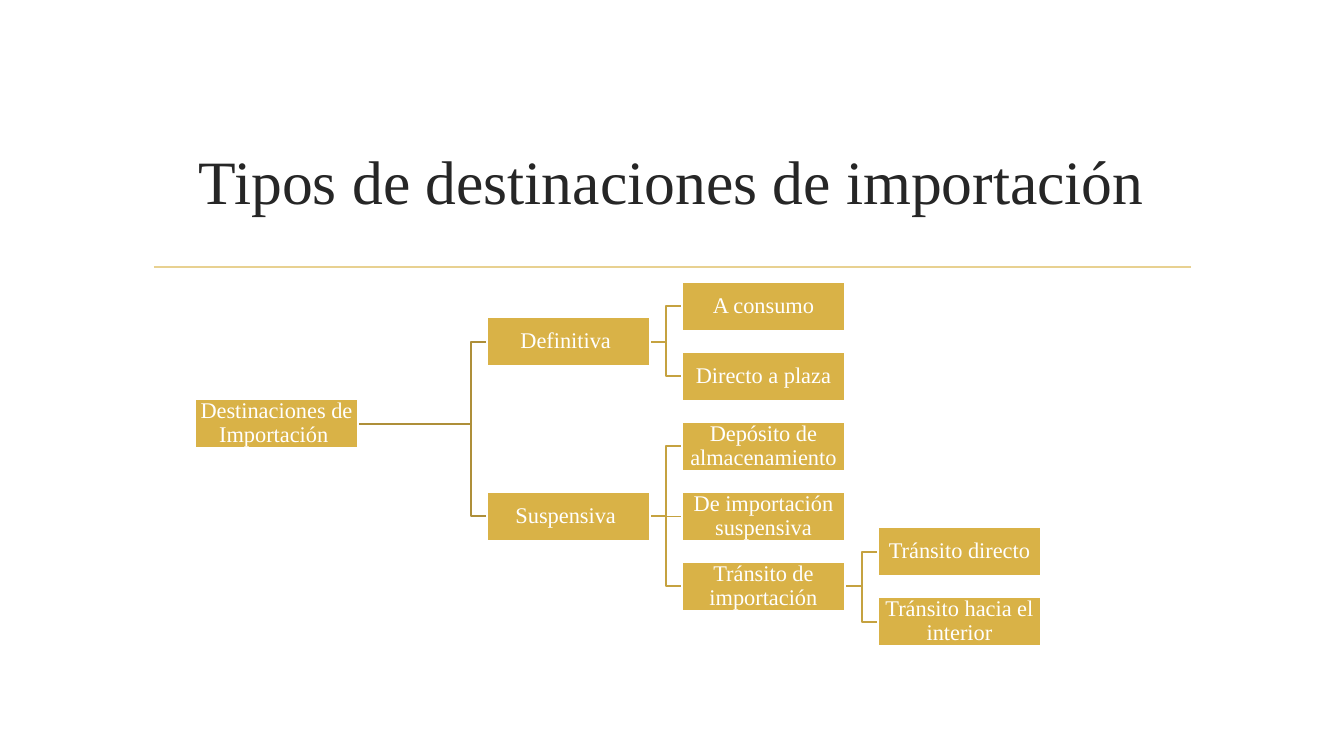
from pptx import Presentation, util as u
from pptx.dml.color import RGBColor
from pptx.enum import shapes, text
from pptx.oxml.ns import qn
from lxml import etree

PX = 914400 / 100.8
INK = RGBColor(0x26, 0x26, 0x26)
WHITE = RGBColor(0xFF, 0xFF, 0xFF)
GOLD = RGBColor(0xD9, 0xB2, 0x47)
RULE = RGBColor(0xE8, 0xD1, 0x91)
TRUNK = RGBColor(0xAE, 0x8F, 0x39)
TWIG = RGBColor(0xC5, 0xA2, 0x40)

COLS = [195, 487, 682, 878]
TOP, STEP = 282, 35
WIDE, HIGH, BEND = 163, 49, 16


def px(n):
    return u.Emu(round(n * PX))


def row(n):
    """Top of a box, counted in half steps between leaves."""
    return TOP + n * STEP


# label, top, children
TREE = ("Destinaciones de Importación ", 399, [
    ("Definitiva ", row(1), [
        ("A consumo", row(0), []),
        ("Directo a plaza", row(2), [])]),
    ("Suspensiva ", row(6), [
        ("Depósito de almacenamiento", row(4), []),
        ("De importación suspensiva", row(6), []),
        ("Tránsito de importación", row(8), [
            ("Tránsito directo", row(7), []),
            ("Tránsito hacia el interior", row(9), [])])])])


class Page:
    font = "Times New Roman"
    stroke = u.Pt(1.25)

    def __init__(self, slide):
        self.shapes = slide.shapes

    def label(self, shape, words, size, color, inset=None, spacing=None):
        frame = shape.text_frame
        frame.word_wrap = True
        frame.vertical_anchor = text.MSO_ANCHOR.MIDDLE
        if inset is not None:
            frame.margin_left = frame.margin_right = px(inset)
            frame.margin_top = frame.margin_bottom = px(inset)
        para = frame.paragraphs[0]
        para.alignment = text.PP_ALIGN.CENTER
        para.line_spacing = spacing
        run = para.add_run()
        run.text = words
        run.font.name = self.font
        run.font.size = u.Pt(size)
        run.font.color.rgb = color

    def pen(self, shape, color):
        shape.line.color.rgb = color
        shape.line.width = self.stroke

    def title(self, words, x, y, w, h):
        box = self.shapes.add_textbox(px(x), px(y), px(w), px(h))
        self.label(box, words, 44, INK)

    def line(self, x1, y1, x2, y2, color):
        line = self.shapes.add_connector(
            shapes.MSO_CONNECTOR.STRAIGHT, px(x1), px(y1), px(x2), px(y2))
        self.pen(line, color)
        etree.SubElement(line._element.spPr, qn("a:effectLst"))
        return line

    def box(self, words, x, y):
        box = self.shapes.add_shape(
            shapes.MSO_SHAPE.RECTANGLE, px(x), px(y), px(WIDE), px(HIGH))
        box.shadow.inherit = False
        box.fill.solid()
        box.fill.fore_color.rgb = GOLD
        self.pen(box, WHITE)
        self.label(box, words, 16, WHITE, inset=1, spacing=0.9)
        return box

    def elbow(self, x1, y1, x2, y2, color):
        bend = x2 - BEND
        route = self.shapes.build_freeform(x1, y1, scale=PX)
        route.add_line_segments([(bend, y1), (bend, y2), (x2, y2)], close=False)
        link = route.convert_to_shape()
        link.shadow.inherit = False
        link.fill.background()
        self.pen(link, color)
        return link

    def branch(self, node, level=0):
        """Draw a node and all below it, with links behind the boxes."""
        words, top, kids = node
        box = self.box(words, COLS[level], top)
        color = TWIG if level else TRUNK
        mid = HIGH / 2
        for kid in kids:
            child = self.branch(kid, level + 1)
            ends = (COLS[level] + WIDE, top + mid,
                    COLS[level + 1], kid[1] + mid, color)
            if kid[1] == top:
                link = self.line(*ends)
                link.begin_connect(box, 3)
                link.end_connect(child, 1)
            else:
                link = self.elbow(*ends)
            self.shapes._spTree.insert(2, link._element)
        return box


def main():
    deck = Presentation()
    deck.slide_width, deck.slide_height = px(1344), px(756)
    page = Page(deck.slides.add_slide(deck.slide_layouts[6]))
    page.line(154, 267, 1191, 267, RULE)
    page.title("Tipos de destinaciones de importación", 143, 108, 1058, 144)
    page.branch(TREE)
    deck.save("out.pptx")


if __name__ == "__main__":
    main()
